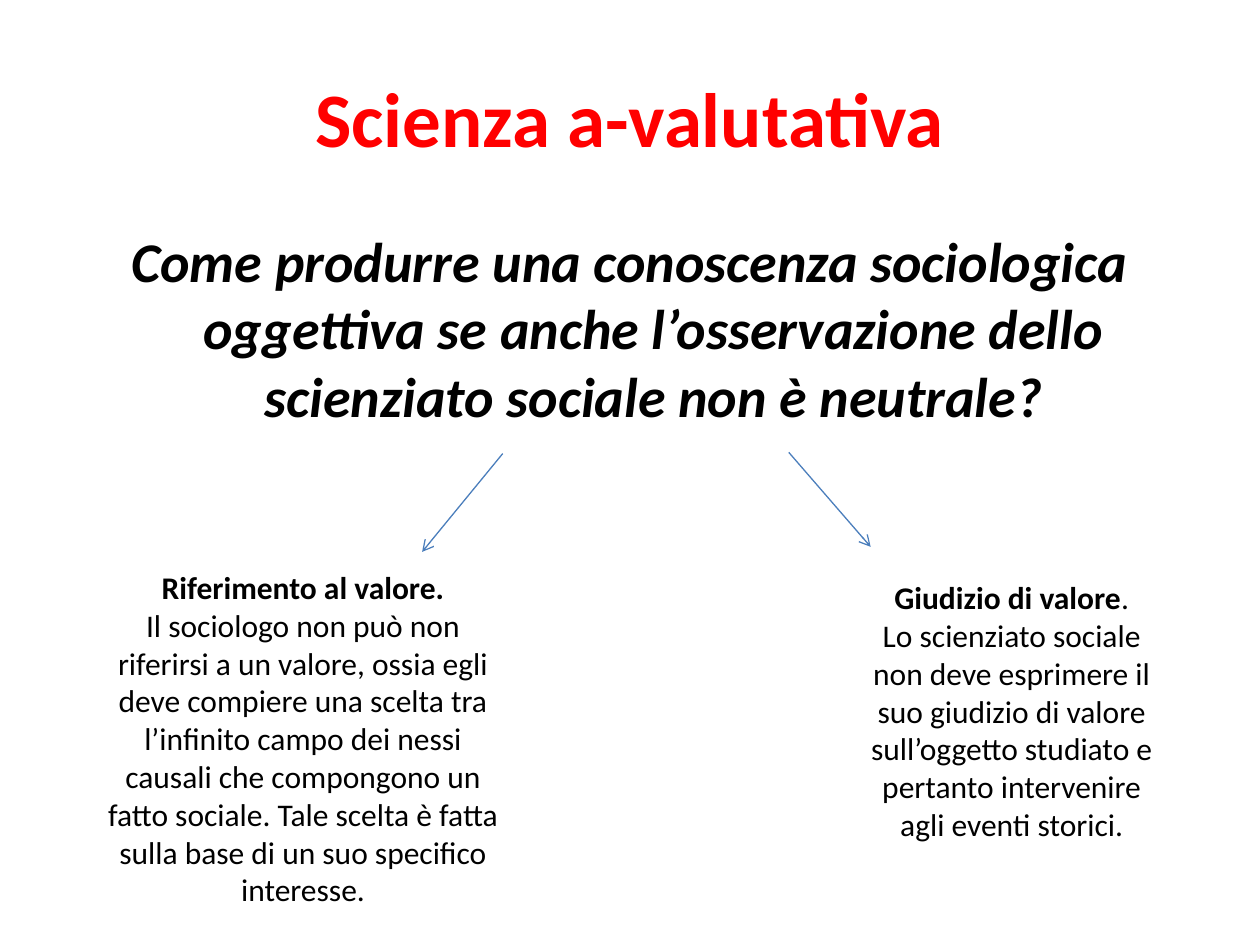
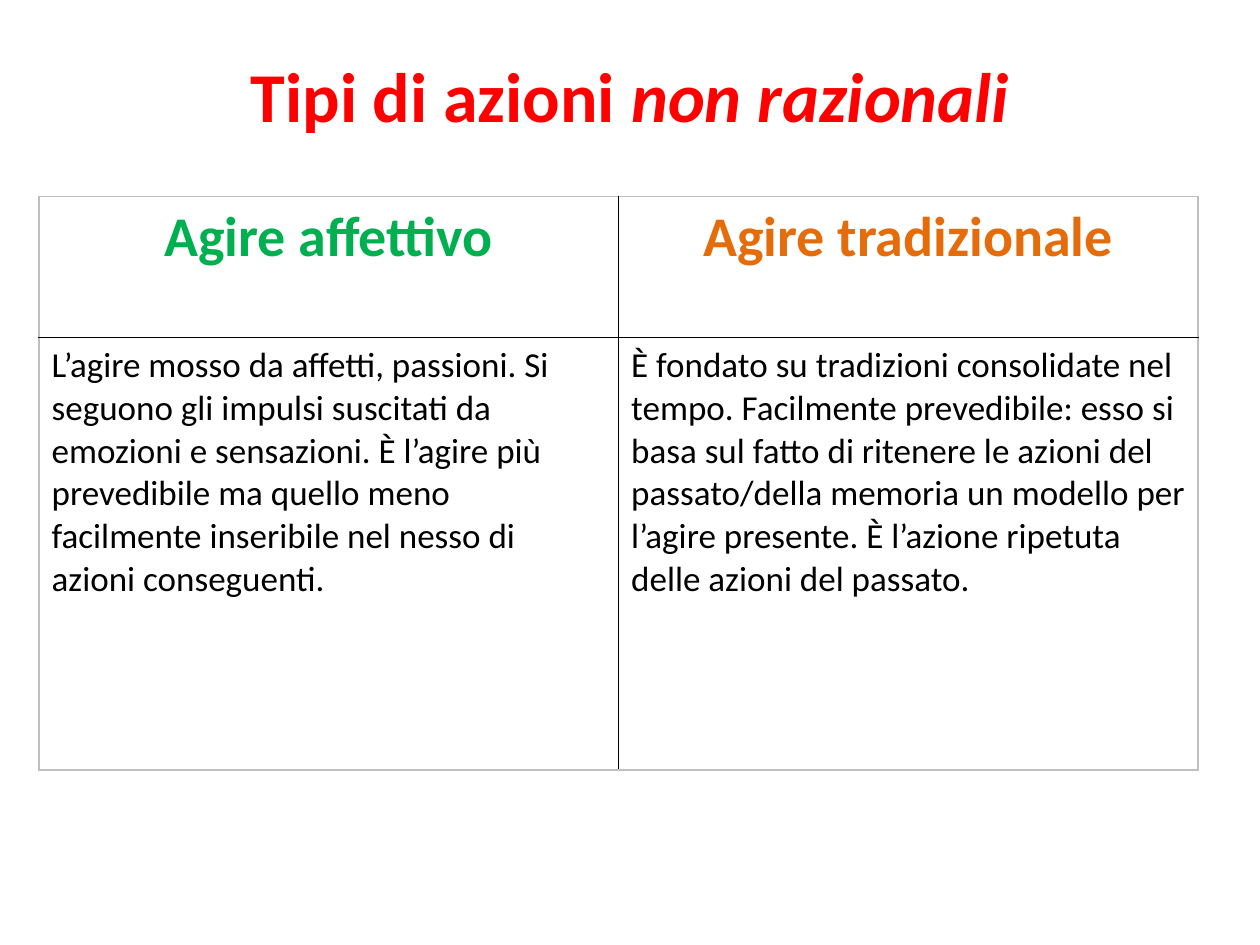
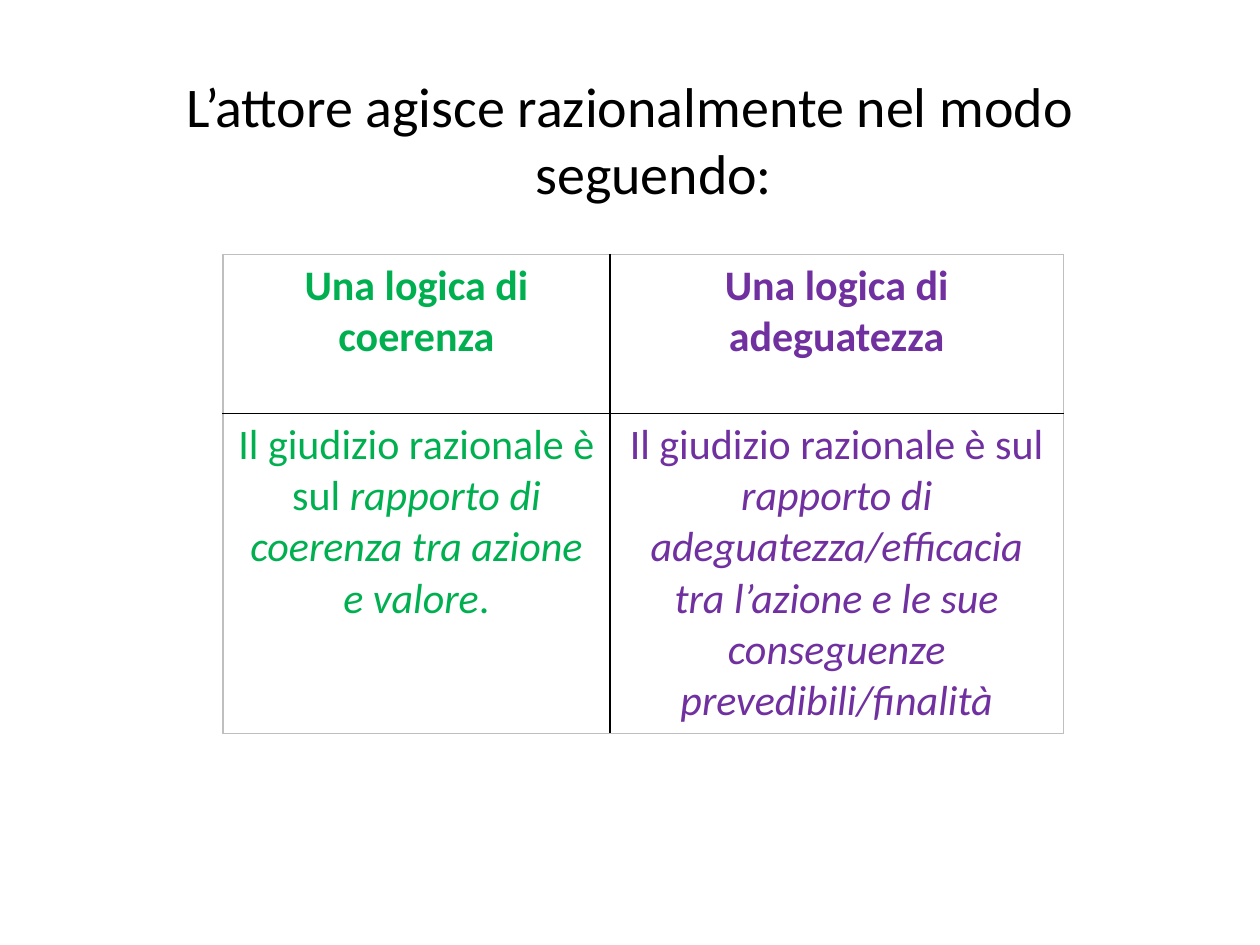
from lxml.etree import SubElement
from pptx import Presentation
from pptx.dml.color import RGBColor
from pptx.enum.shapes import MSO_CONNECTOR
from pptx.enum.text import MSO_ANCHOR, PP_ALIGN
from pptx.oxml.ns import qn
from pptx.util import Inches, Pt

FONT = "Calibri"
BLACK = RGBColor(0x00, 0x00, 0x00)
RED = RGBColor(0xFF, 0x00, 0x00)
GREEN = RGBColor(0x00, 0xB0, 0x50)
ORANGE = RGBColor(0xE4, 0x6C, 0x0A)
PURPLE = RGBColor(0x70, 0x30, 0xA0)
BLUE = RGBColor(0x4B, 0x7E, 0xBC)
GREY = RGBColor(0xBF, 0xBF, 0xBF)
HANGING_INDENT = Inches(0.38)


def write(text_frame, paragraphs, size, color, align=PP_ALIGN.CENTER):
    """Each paragraph is a list of (text, style); style may hold b and i."""
    text_frame.word_wrap = True
    for index, parts in enumerate(paragraphs):
        paragraph = text_frame.add_paragraph() if index else text_frame.paragraphs[0]
        paragraph.alignment = align
        for text, style in parts:
            run = paragraph.add_run()
            run.text = text
            run.font.name = FONT
            run.font.size = Pt(size)
            run.font.color.rgb = color
            run.font.bold = "b" in style
            run.font.italic = "i" in style


def add_text(slide, box, paragraphs, size, color=BLACK, hanging=False):
    text_box = slide.shapes.add_textbox(*[Inches(value) for value in box])
    write(text_box.text_frame, paragraphs, size, color)
    if hanging:
        for paragraph in text_box.text_frame.paragraphs:
            properties = paragraph._p.get_or_add_pPr()
            properties.set("marL", str(HANGING_INDENT))
            properties.set("indent", str(-HANGING_INDENT))
    return text_box.text_frame


presentation = Presentation()
presentation.slide_width = Inches(10)
presentation.slide_height = Inches(7.5)
blank_layout = presentation.slide_layouts[6]
science, actions, logics = [presentation.slides.add_slide(blank_layout) for _ in range(3)]

# Slide 1: title and question
title = add_text(science, (0.5, 0.3, 9, 1.25), [[("Scienza a-valutativa", "b")]], 44, RED)
title.vertical_anchor = MSO_ANCHOR.MIDDLE
question = (
    "Come produrre una conoscenza sociologica oggettiva se anche "
    "l’osservazione dello scienziato sociale non è neutrale?"
)
add_text(science, (0.5, 1.75, 9, 4.95), [[(question, "bi")]], 32, hanging=True)

# Slide 1: arrows to the two answers
for ends in [(6.26, 3.59, 6.91, 4.34), (3.99, 3.6, 3.35, 4.38)]:
    arrow = science.shapes.add_connector(
        MSO_CONNECTOR.STRAIGHT, *[Inches(value) for value in ends]
    )
    arrow.line.color.rgb = BLUE
    arrow.line.width = Pt(0.75)
    SubElement(arrow.line._get_or_add_ln(), qn("a:tailEnd"), type="arrow")
    SubElement(arrow._element.spPr, qn("a:effectLst"))

# Slide 1: the two answers
reference = (
    "Il sociologo non può non riferirsi a un valore, ossia egli deve compiere una "
    "scelta tra l’infinito campo dei nessi causali che compongono un fatto sociale. "
    "Tale scelta è fatta sulla base di un suo specifico interesse."
)
judgement = (
    "Lo scienziato sociale non deve esprimere il suo giudizio di valore "
    "sull’oggetto studiato e pertanto intervenire agli eventi storici."
)
add_text(
    science, (0.75, 4.46, 3.31, 2.83),
    [[("Riferimento al valore.", "b")], [(reference, "")]], 18,
)
add_text(
    science, (6.81, 4.54, 2.44, 2.52),
    [[("Giudizio di valore", "b"), (".", "")], [(judgement, "")]], 18,
)

# Slide 2: title
title = add_text(
    actions, (0.5, 0.3, 9, 2.27),
    [[("Tipi di azioni ", "b"), ("non razionali", "bi")]], 40, RED,
)
title.margin_top = Inches(0.12)

# Slide 3: introduction
introduction = "L’attore agisce razionalmente nel modo seguendo:"
add_text(logics, (0.5, 0.52, 9, 6.18), [[(introduction, "")]], 32, hanging=True)

# Cells of both tables: (runs, colour)
action_cells = [
    [
        ([("Agire affettivo", "b")], GREEN),
        ([("Agire tradizionale", "b")], ORANGE),
    ],
    [
        ([("L’agire mosso da affetti, passioni. Si seguono gli impulsi suscitati da "
           "emozioni e sensazioni. È l’agire più prevedibile ma quello meno facilmente "
           "inseribile nel nesso di azioni conseguenti.", "")], BLACK),
        ([("È fondato su tradizioni consolidate nel tempo. Facilmente prevedibile: esso "
           "si basa sul fatto di ritenere le azioni del passato/della memoria un modello "
           "per l’agire presente. È l’azione ripetuta delle azioni del passato.", "")], BLACK),
    ],
]
logic_cells = [
    [
        ([("Una logica di coerenza", "b")], GREEN),
        ([("Una logica di adeguatezza", "b")], PURPLE),
    ],
    [
        ([("Il giudizio razionale è sul ", ""),
          ("rapporto di coerenza tra azione e valore", "i"), (".", "")], GREEN),
        ([("Il giudizio razionale è sul ", ""),
          ("rapporto di adeguatezza/efficacia tra l’azione e le sue conseguenze "
           "prevedibili/finalità", "i")], PURPLE),
    ],
]

# Tables: slide, left, top, column widths, row heights, text size and alignment by row
tables = [
    (actions, 0.31, 1.56, (4.6, 4.6), (1.12, 3.43),
     ((32, PP_ALIGN.CENTER), (20, PP_ALIGN.LEFT)), action_cells),
    (logics, 1.77, 2.02, (3.07, 3.6), (1.26, 2.54),
     ((24, PP_ALIGN.CENTER), (24, PP_ALIGN.CENTER)), logic_cells),
]
for slide, left, top, widths, heights, row_styles, rows in tables:
    table = slide.shapes.add_table(
        len(heights), len(widths), Inches(left), Inches(top),
        Inches(sum(widths)), Inches(sum(heights)),
    ).table
    table.first_row = False
    table.horz_banding = False
    for column, width in zip(table.columns, widths):
        column.width = Inches(width)
    for row, height in zip(table.rows, heights):
        row.height = Inches(height)
    for row_index, (size, align) in enumerate(row_styles):
        for column_index, (parts, color) in enumerate(rows[row_index]):
            cell = table.cell(row_index, column_index)
            write(cell.text_frame, [parts], size, color, align)

            # Grey outer edges, black inner lines
            outer_edges = {
                "a:lnL": column_index == 0,
                "a:lnR": column_index == len(widths) - 1,
                "a:lnT": row_index == 0,
                "a:lnB": row_index == len(heights) - 1,
            }
            properties = cell._tc.get_or_add_tcPr()
            for edge, is_outer in outer_edges.items():
                line = SubElement(properties, qn(edge), w=str(Pt(1)))
                fill = SubElement(line, qn("a:solidFill"))
                SubElement(fill, qn("a:srgbClr"), val=str(GREY if is_outer else BLACK))
            cell.fill.background()

presentation.save("out.pptx")
